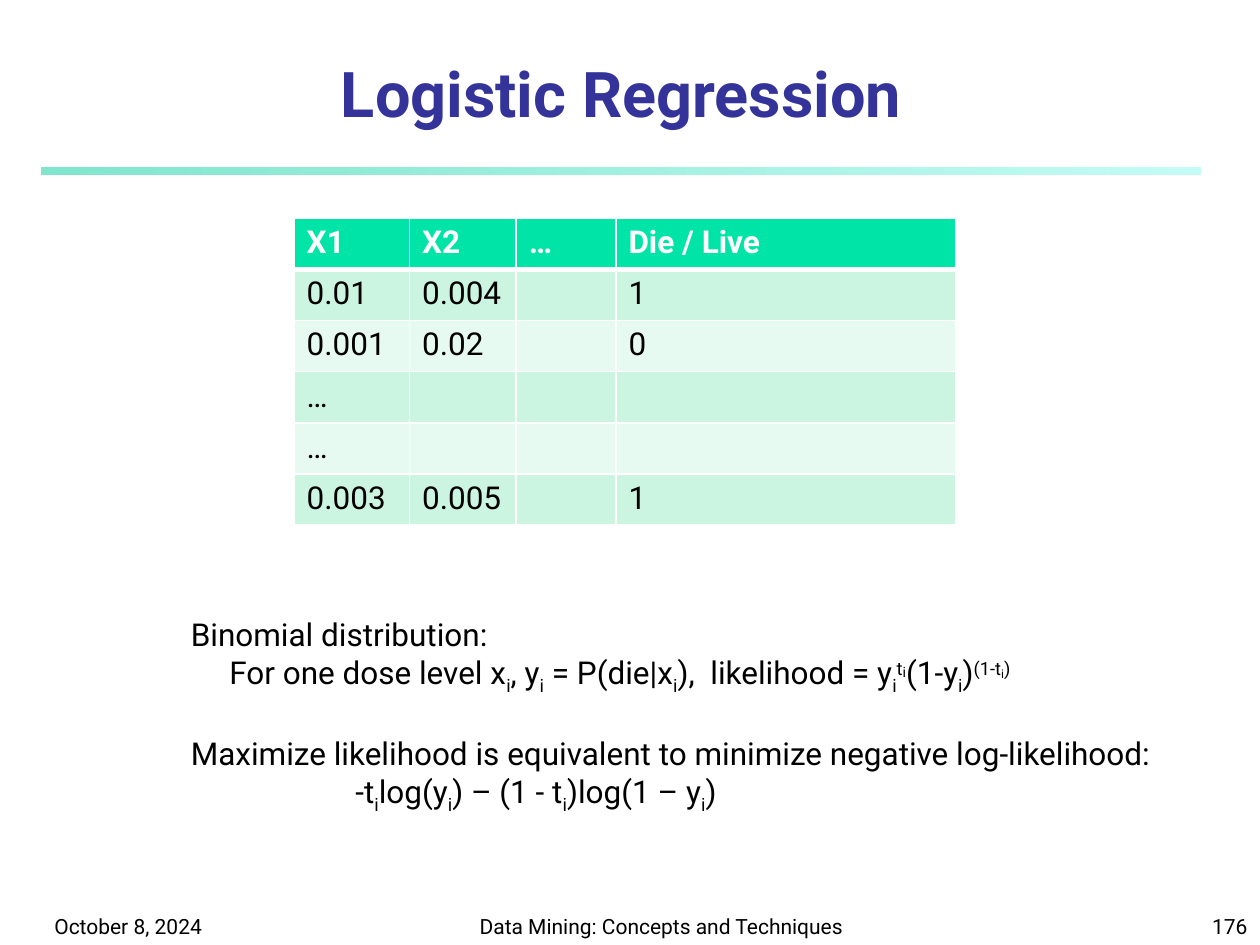
import pptx
import pptx.dml.color
import pptx.enum.shapes
import pptx.enum.text
import pptx.oxml
import pptx.oxml.ns
import pptx.util
from lxml import etree

Pt = pptx.util.Pt
RGBColor = pptx.dml.color.RGBColor
ALIGN = pptx.enum.text.PP_ALIGN
ANCHOR = pptx.enum.text.MSO_ANCHOR

FONT = "Roboto"
BLACK = RGBColor(0x00, 0x00, 0x00)
WHITE = RGBColor(0xFF, 0xFF, 0xFF)
NAVY = RGBColor(0x33, 0x33, 0x99)
GREEN = RGBColor(0x00, 0xCE, 0x98)
AQUA = RGBColor(0x8F, 0xF9, 0xEF)
HEADER = RGBColor(0x00, 0xE4, 0xA8)
BAND_DARK = RGBColor(0xCB, 0xF5, 0xE1)
BAND_LIGHT = RGBColor(0xE7, 0xFA, 0xF1)

SUB, SUP = -25000, 30000
SUB_I = ("i", SUB)

ROWS = [
    ["X1", "X2", "…", "Die / Live"],
    ["0.01", "0.004", "", "1"],
    ["0.001", "0.02", "", "0"],
    ["…", "", "", ""],
    ["…", "", "", ""],
    ["0.003", "0.005", "", "1"],
]
COL_WIDTHS = [66, 61, 57, 194]
ROW_HEIGHT = 29.28

NOTES = [
    (0, 0, ["Binomial distribution:"]),
    (22, 0, ["For one dose level x", SUB_I, ", y", SUB_I, " = P(die|x", SUB_I,
             "),  likelihood = y", SUB_I, ("t", SUP), ("i", SUP, 14),
             "(1-y", SUB_I, ")", ("(1-t", SUP), ("i", SUP, 12), (")", SUP)]),
    (0, 22, ["Maximize likelihood is equivalent to minimize negative log-likelihood:"]),
    (94, 0, ["-t", SUB_I, "log(y", SUB_I, ") – (1 - t", SUB_I,
             ")log(1 – y", SUB_I, ")"]),
]


def format_run(r, size, color=BLACK, bold=False):
    r.font.name = FONT
    r.font.size = Pt(size)
    r.font.bold = bold
    r.font.color.rgb = color


def add_title(s, text):
    sp = s.shapes.title
    sp.left, sp.top, sp.width, sp.height = Pt(24), Pt(30), Pt(662), Pt(48)
    tf = sp.text_frame
    tf.text = text
    tf.vertical_anchor = ANCHOR.BOTTOM
    p = tf.paragraphs[0]
    p.alignment = ALIGN.CENTER
    format_run(p.runs[0], 36, NAVY, True)


def add_rule(s):
    sp = s.shapes.add_shape(pptx.enum.shapes.MSO_SHAPE.RECTANGLE,
                            Pt(24), Pt(96), Pt(662), Pt(4))
    sp.shadow.inherit = False
    sp.line.fill.background()
    sp.fill.gradient()
    sp.fill.gradient_angle = 0
    stops = sp.fill.gradient_stops
    for stop, color, alpha in zip(stops, (GREEN, AQUA), (50000, 52000)):
        stop.color.rgb = color
    qn = pptx.oxml.ns.qn
    for clr, alpha in zip(sp.fill._xPr.iter(qn("a:srgbClr")), (50000, 52000)):
        etree.SubElement(clr, qn("a:alpha")).set("val", str(alpha))


def add_footer(s, left, width, text, align):
    sp = s.shapes.add_textbox(Pt(left), Pt(510), Pt(width), Pt(30))
    tf = sp.text_frame
    tf.word_wrap = True
    tf.vertical_anchor = ANCHOR.BOTTOM
    tf.text = text
    p = tf.paragraphs[0]
    p.alignment = align
    format_run(p.runs[0], 12)


def set_borders(cell, top, bottom):
    tc_pr = cell._tc.get_or_add_tcPr()
    for side, width in (("L", 1), ("R", 1), ("T", top), ("B", bottom)):
        tc_pr.append(pptx.oxml.parse_xml(
            f'<a:ln{side} {pptx.oxml.ns.nsdecls("a")} w="{Pt(width)}">'
            f'<a:solidFill><a:srgbClr val="{WHITE}"/></a:solidFill></a:ln{side}>'))


def add_data_table(s):
    table = s.shapes.add_table(len(ROWS), len(COL_WIDTHS), Pt(168), Pt(124.6),
                               Pt(sum(COL_WIDTHS)), Pt(ROW_HEIGHT * len(ROWS))).table
    for column, width in zip(table.columns, COL_WIDTHS):
        column.width = Pt(width)
    for i, values in enumerate(ROWS):
        table.rows[i].height = Pt(ROW_HEIGHT)
        head = i == 0
        fill = HEADER if head else BAND_DARK if i % 2 else BAND_LIGHT
        for j, value in enumerate(values):
            cell = table.cell(i, j)
            set_borders(cell, 3 if i == 1 else 1, 3 if head else 1)
            cell.fill.solid()
            cell.fill.fore_color.rgb = fill
            if value:
                cell.text_frame.text = value
                format_run(cell.text_frame.paragraphs[0].runs[0], 18,
                           WHITE if head else BLACK, head)


def add_formula_run(p, text, baseline=0, size=18):
    r = p.add_run()
    r.text = text
    format_run(r, size)
    if baseline:
        r.font._element.set("baseline", str(baseline))


def add_notes(s):
    sp = s.shapes.add_textbox(Pt(102), Pt(348), Pt(564.5), Pt(116.6))
    tf = sp.text_frame
    tf.word_wrap = False
    for i, (indent, gap, parts) in enumerate(NOTES):
        p = tf.add_paragraph() if i else tf.paragraphs[0]
        p.alignment = ALIGN.LEFT
        p.space_before = Pt(gap)
        p._p.get_or_add_pPr().set("marL", str(Pt(indent)))
        for part in parts:
            add_formula_run(p, *((part,) if isinstance(part, str) else part))


def main():
    prs = pptx.Presentation()
    prs.slide_width, prs.slide_height = Pt(720), Pt(540)
    s = prs.slides.add_slide(prs.slide_layouts[5])
    add_rule(s)
    add_title(s, "Logistic Regression")
    add_footer(s, 24, 150, "October 8, 2024", ALIGN.LEFT)
    add_footer(s, 264, 228, "Data Mining: Concepts and Techniques", ALIGN.CENTER)
    add_footer(s, 570, 150, "176", ALIGN.RIGHT)
    add_data_table(s)
    add_notes(s)
    prs.save("out.pptx")


if __name__ == "__main__":
    main()
